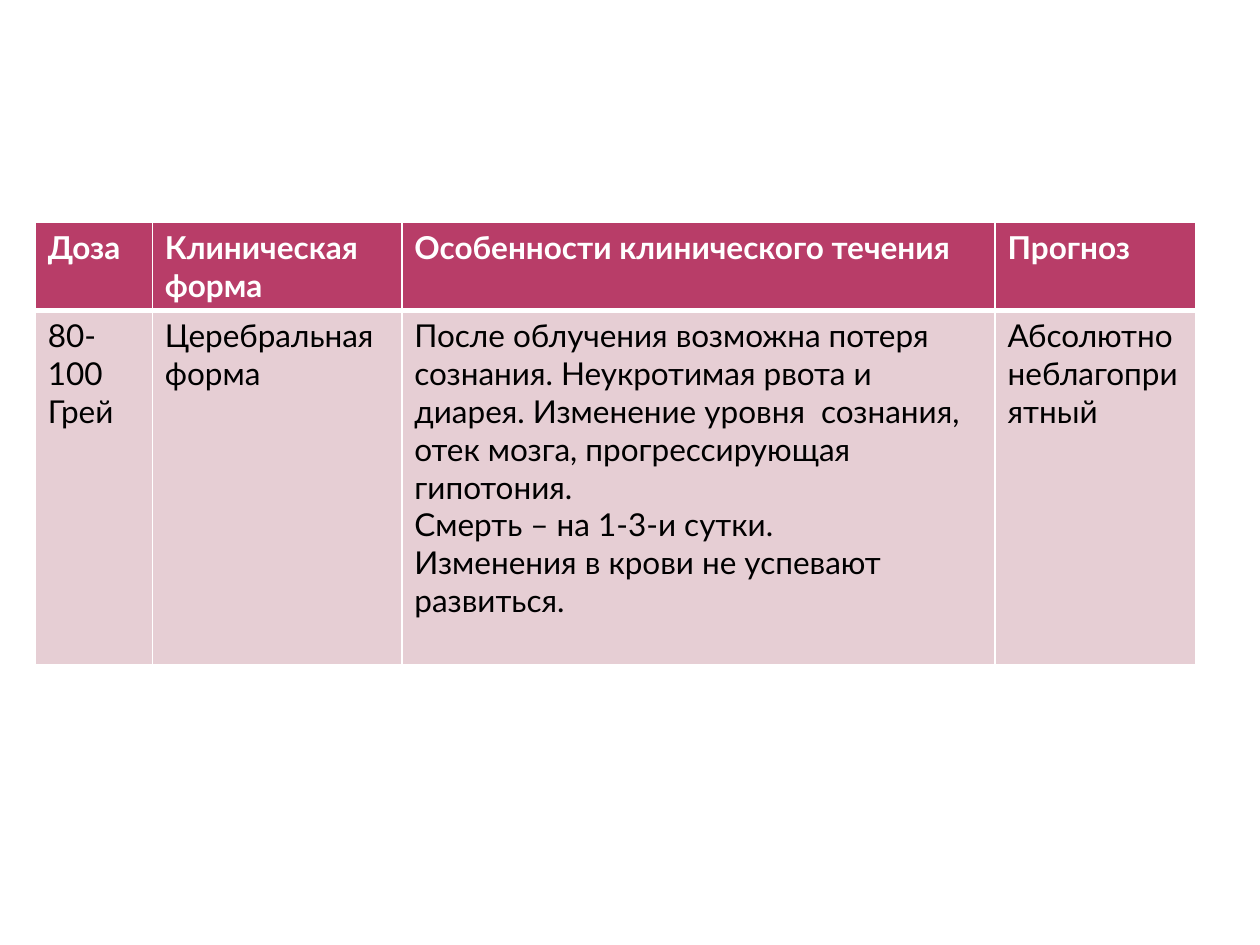
from dataclasses import dataclass

from lxml.etree import SubElement
from pptx import Presentation
from pptx.dml.color import RGBColor
from pptx.oxml.ns import qn
from pptx.util import Cm, Pt


@dataclass(frozen=True)
class Theme:
    """Colours, font and sizes of the slide."""
    font: str = "Lato"
    text_size: float = 18
    header_fill: str = "B83D68"
    header_text: str = "FFFFFF"
    body_fill: str = "E6CED4"
    body_text: str = "000000"
    border: str = "FFFFFF"
    thin: float = 1
    thick: float = 3


THEME = Theme()
COLUMN_WIDTHS = (2.36, 5.03, 11.96, 4.04)
ROW_HEIGHTS = (1.74, 7.15)
HEADERS = ("Доза", "Клиническая форма", "Особенности клинического течения", "Прогноз")
CEREBRAL_FORM = (
    "80-100 Грей",
    "Церебральная форма",
    "После облучения возможна потеря сознания. Неукротимая рвота и диарея. "
    "Изменение уровня  сознания, отек мозга, прогрессирующая гипотония.\n"
    "Смерть – на 1-3-и сутки.\n"
    "Изменения в крови не успевают развиться.",
    "Абсолютно неблагоприятный",
)


def write_text(frame, text, *, color, bold=False):
    """Write each line of the text as a formatted paragraph."""
    for index, line in enumerate(text.split("\n")):
        para = frame.add_paragraph() if index else frame.paragraphs[0]
        span = para.add_run()
        span.text = line
        span.font.name = THEME.font
        span.font.size = Pt(THEME.text_size)
        span.font.bold = bold
        span.font.color.rgb = RGBColor.from_string(color)


def draw_borders(cell, **widths):
    """Draw the cell borders with a width in points for each side."""
    properties = cell._tc.get_or_add_tcPr()
    for side, width in widths.items():
        line = SubElement(properties, qn(f"a:ln{side}"), w=str(Pt(width)))
        fill = SubElement(line, qn("a:solidFill"))
        SubElement(fill, qn("a:srgbClr"), val=THEME.border)


def fill_row(row, texts, *, fill, color, bold, top, bottom):
    """Fill one table row with styled cells."""
    for cell, text in zip(row.cells, texts):
        draw_borders(cell, L=THEME.thin, R=THEME.thin, T=top, B=bottom)
        cell.fill.solid()
        cell.fill.fore_color.rgb = RGBColor.from_string(fill)
        write_text(cell.text_frame, text, color=color, bold=bold)


def add_dose_table(page):
    """Add the table of dose, clinical form, course and prognosis."""
    table = page.shapes.add_table(
        len(ROW_HEIGHTS), len(COLUMN_WIDTHS), Cm(0.71), Cm(4.48),
        Cm(sum(COLUMN_WIDTHS)), Cm(sum(ROW_HEIGHTS)),
    ).table
    for column, width in zip(table.columns, COLUMN_WIDTHS):
        column.width = Cm(width)
    for row, height in zip(table.rows, ROW_HEIGHTS):
        row.height = Cm(height)
    header, body = table.rows
    fill_row(header, HEADERS, fill=THEME.header_fill, color=THEME.header_text,
             bold=True, top=THEME.thin, bottom=THEME.thick)
    fill_row(body, CEREBRAL_FORM, fill=THEME.body_fill, color=THEME.body_text,
             bold=False, top=THEME.thick, bottom=THEME.thin)


def main():
    """Build the slide and save the deck."""
    deck = Presentation()
    deck.slide_width, deck.slide_height = Cm(25.4), Cm(19.05)
    page = deck.slides.add_slide(deck.slide_layouts[6])
    add_dose_table(page)
    deck.save("out.pptx")


if __name__ == "__main__":
    main()
